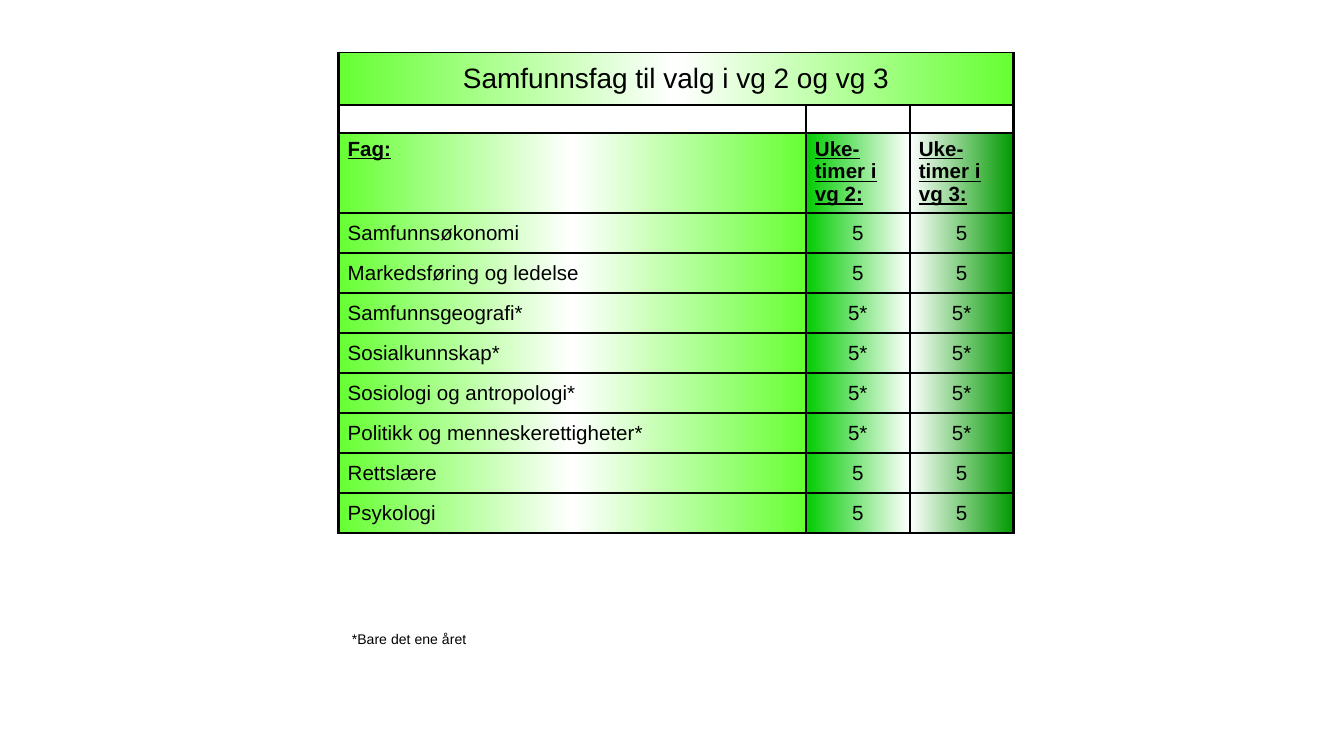
from typing import NamedTuple

from lxml import etree
from pptx import Presentation
from pptx.dml.color import RGBColor
from pptx.enum.text import MSO_ANCHOR, MSO_AUTO_SIZE, PP_ALIGN
from pptx.oxml.ns import qn
from pptx.util import Pt

LEFT, CENTER = PP_ALIGN.LEFT, PP_ALIGN.CENTER
TOP, MIDDLE = MSO_ANCHOR.TOP, MSO_ANCHOR.MIDDLE
FIT_SHAPE = MSO_AUTO_SIZE.SHAPE_TO_FIT_TEXT
FONT = "Arial"
BLACK = "000000"
THIN, THICK = 1, 2.25
TABLE_LEFT, TABLE_TOP = 181.4, 28.1
TITLE_HEIGHT, GAP_HEIGHT, HEADER_HEIGHT, SUBJECT_HEIGHT = 28.1, 15, 42.9, 21.43


class Column(NamedTuple):
    heading: str
    width: float
    gradient: tuple[str, ...]
    alignment: PP_ALIGN


class Subject(NamedTuple):
    name: str
    hours: str


COLUMNS = (
    Column("Fag:", 250.3, ("66FF33", "FFFFFF", "66FF33"), LEFT),
    Column("Uke-timer i vg 2:", 55.7, ("00CC00", "FFFFFF"), CENTER),
    Column("Uke-timer i vg 3:", 55.7, ("FFFFFF", "009900"), CENTER),
)
SUBJECTS = (
    Subject("Samfunnsøkonomi", "5"),
    Subject("Markedsføring og ledelse", "5"),
    Subject("Samfunnsgeografi*", "5*"),
    Subject("Sosialkunnskap*", "5*"),
    Subject("Sosiologi og antropologi*", "5*"),
    Subject("Politikk og menneskerettigheter*", "5*"),
    Subject("Rettslære", "5"),
    Subject("Psykologi", "5"),
)


def color(value: str) -> RGBColor:
    return RGBColor.from_string(value)


def add_color(parent, value: str) -> None:
    etree.SubElement(parent, qn("a:srgbClr"), val=str(color(value)))


def set_borders(cell, left: float, right: float) -> None:
    properties = cell._tc.get_or_add_tcPr()
    for side, width in (("L", left), ("R", right), ("T", THIN), ("B", THIN)):
        line = etree.SubElement(properties, qn(f"a:ln{side}"), w=str(int(Pt(width))))
        add_color(etree.SubElement(line, qn("a:solidFill")), BLACK)


def set_gradient(cell, colors: tuple[str, ...]) -> None:
    gradient = etree.SubElement(cell._tc.get_or_add_tcPr(), qn("a:gradFill"))
    stops = etree.SubElement(gradient, qn("a:gsLst"))
    for index, value in enumerate(colors):
        position = index * 100000 // (len(colors) - 1)
        add_color(etree.SubElement(stops, qn("a:gs"), pos=str(position)), value)
    etree.SubElement(gradient, qn("a:lin"), ang="0", scaled="0")


def format_paragraph(paragraph, text: str, size: float, alignment: PP_ALIGN) -> None:
    paragraph.text = text
    paragraph.alignment = alignment
    font = paragraph.font
    font.name, font.size = FONT, Pt(size)
    font.color.rgb = color(BLACK)


def fill_cell(cell, text: str, size: float, alignment: PP_ALIGN,
              gradient: tuple[str, ...], anchor: MSO_ANCHOR = MIDDLE,
              emphasis: bool = False) -> None:
    cell.margin_left = cell.margin_right = Pt(4.9)
    cell.margin_top = cell.margin_bottom = Pt(2.5)
    cell.vertical_anchor = anchor
    set_gradient(cell, gradient)
    paragraph = cell.text_frame.paragraphs[0]
    format_paragraph(paragraph, text, size, alignment)
    paragraph.font.bold = paragraph.font.underline = emphasis


def clear_cell(cell) -> None:
    cell.fill.background()
    paragraph = cell.text_frame.paragraphs[0]
    etree.SubElement(paragraph._p, qn("a:endParaRPr"), sz="600")


def add_subject_table(slide) -> None:
    heights = [TITLE_HEIGHT, GAP_HEIGHT, HEADER_HEIGHT] + [SUBJECT_HEIGHT] * len(SUBJECTS)
    width = sum(column.width for column in COLUMNS)
    table = slide.shapes.add_table(len(heights), len(COLUMNS), Pt(TABLE_LEFT), Pt(TABLE_TOP),
                                   Pt(width), Pt(sum(heights))).table
    table.first_row = table.horz_banding = False
    for row, height in zip(table.rows, heights):
        row.height = Pt(height)

    title = table.cell(0, 0)
    title.merge(table.cell(0, len(COLUMNS) - 1))
    set_borders(title, THICK, THICK)
    fill_cell(title, "Samfunnsfag til valg i vg 2 og vg 3", 15, CENTER, COLUMNS[0].gradient)

    last = len(COLUMNS) - 1
    for index, column in enumerate(COLUMNS):
        table.columns[index].width = Pt(column.width)
        for row in range(1, len(heights)):
            set_borders(table.cell(row, index), THICK if index == 0 else THIN,
                        THICK if index == last else THIN)
        clear_cell(table.cell(1, index))
        fill_cell(table.cell(2, index), column.heading, 11, LEFT, column.gradient, TOP, True)
        for row, subject in enumerate(SUBJECTS, start=3):
            text = subject.name if index == 0 else subject.hours
            fill_cell(table.cell(row, index), text, 11, column.alignment, column.gradient)


def add_footnote(slide) -> None:
    shape = slide.shapes.add_textbox(Pt(TABLE_LEFT), Pt(334.1), Pt(87.8), Pt(16.6))
    shape.text_frame.word_wrap = True
    shape.text_frame.auto_size = FIT_SHAPE
    format_paragraph(shape.text_frame.paragraphs[0], "*Bare det ene året", 7.5, LEFT)


def main() -> None:
    presentation = Presentation()
    presentation.slide_width, presentation.slide_height = Pt(720), Pt(405)
    slide = presentation.slides.add_slide(presentation.slide_layouts[6])
    add_subject_table(slide)
    add_footnote(slide)
    presentation.save("out.pptx")


if __name__ == "__main__":
    main()
